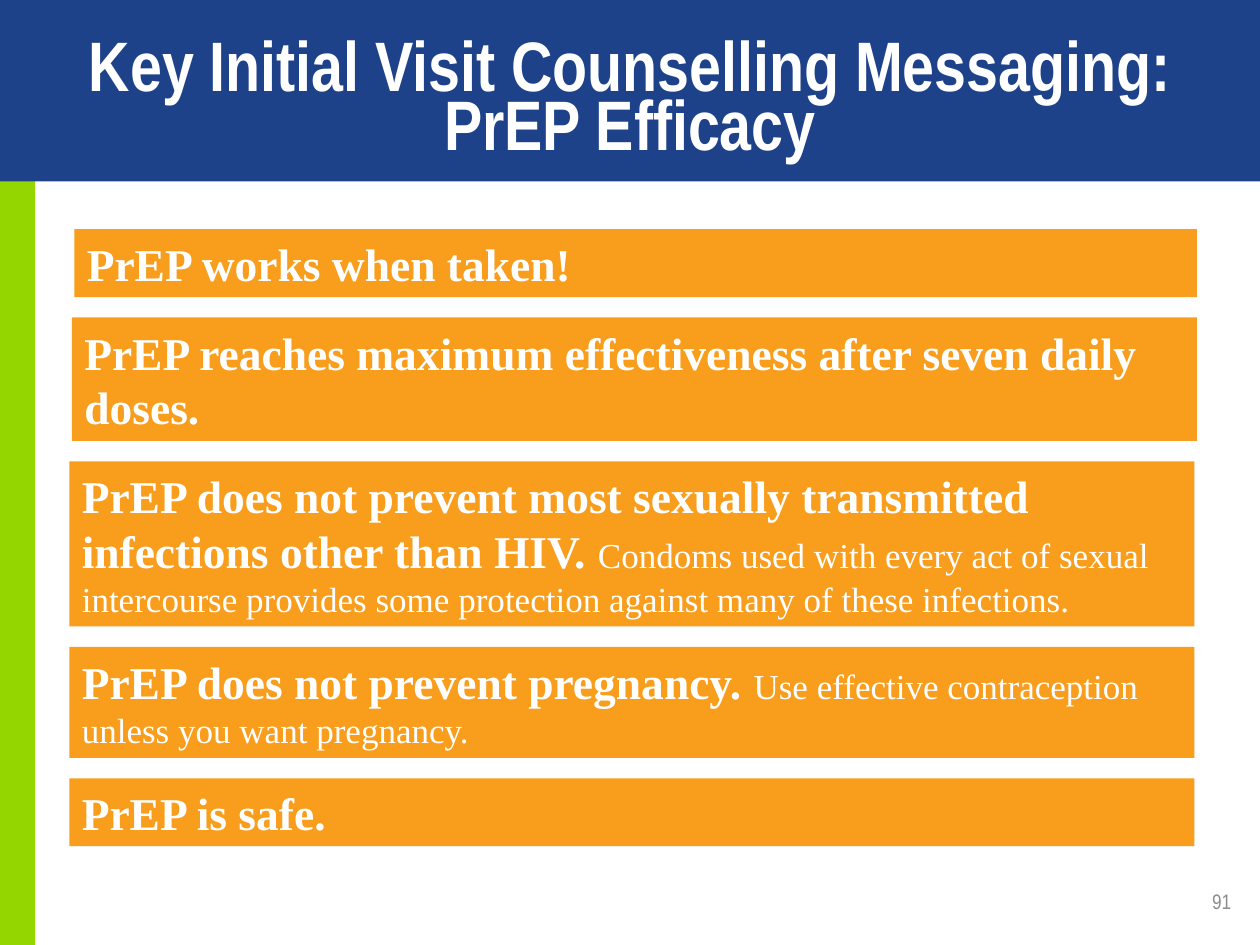
from dataclasses import dataclass

from pptx import Presentation
from pptx.dml.color import RGBColor as RGB
from pptx.enum.shapes import MSO_SHAPE as Shape
from pptx.enum.text import MSO_ANCHOR as Anchor, MSO_AUTO_SIZE as AutoSize, PP_ALIGN as Align
from pptx.util import Cm, Pt


@dataclass(frozen=True)
class Theme:
    """Colours, fonts and type sizes of the slide."""
    blue: RGB = RGB.from_string("1E428A")
    green: RGB = RGB.from_string("94D600")
    orange: RGB = RGB.from_string("F99D1C")
    white: RGB = RGB.from_string("FFFFFF")
    grey: RGB = RGB.from_string("8C8C8C")
    heading_font: str = "Arial Narrow"
    body_font: str = "Times New Roman"
    title: Pt = Pt(40)
    lead: Pt = Pt(26)
    detail: Pt = Pt(20)
    number: Pt = Pt(12)


THEME = Theme()
GAP = 0.41
MESSAGES = [
    (0.1, 22.63, 1.37, "PrEP works when taken!", ""),
    (0.05, 22.68, 2.49, "PrEP reaches maximum effectiveness after seven daily doses.", ""),
    (0, 22.68, 3.33,
     "PrEP does not prevent most sexually transmitted infections other than HIV. ",
     "Condoms used with every act of sexual intercourse provides some protection "
     "against many of these infections."),
    (0, 22.68, 2.24, "PrEP does not prevent pregnancy. ",
     "Use effective contraception unless you want pregnancy."),
    (0, 22.68, 1.37, "PrEP is safe.", ""),
]


def style(font, name, size, color, bold=False):
    """Set the typeface, size, colour and weight of a font."""
    font.name, font.size, font.bold = name, size, bold
    font.color.rgb = color


def add_block(s, left, top, width, height, color):
    """Add a flat rectangle, measured in centimetres."""
    sp = s.shapes.add_shape(Shape.RECTANGLE, Cm(left), Cm(top), Cm(width), Cm(height))
    sp.shadow.inherit = False
    sp.fill.solid()
    sp.fill.fore_color.rgb = color
    sp.line.fill.background()
    return sp


def add_header(s, left, top, width, height, text):
    """Draw the blue band and set the title placeholder on it."""
    band = add_block(s, left, top, width, height, THEME.blue)
    title = s.shapes.title
    title.left, title.top = Cm(left + 1.27), Cm(top + 0.89)
    title.width, title.height = Cm(width - 2.54), Cm(2.39)
    band.element.addnext(title.element)
    tf = title.text_frame
    tf.text = text
    tf.word_wrap, tf.auto_size = True, AutoSize.NONE
    tf.vertical_anchor = Anchor.MIDDLE
    p = tf.paragraphs[0]
    p.alignment, p.line_spacing = Align.CENTER, 0.7
    style(p.font, THEME.heading_font, THEME.title, THEME.white, True)


def add_message(s, left, top, width, height, lead, detail):
    """Add one orange bar with a bold lead and an optional detail."""
    tf = add_block(s, left, top, width, height, THEME.orange).text_frame
    tf.word_wrap, tf.vertical_anchor = True, Anchor.MIDDLE
    tf.auto_size = AutoSize.SHAPE_TO_FIT_TEXT
    p = tf.paragraphs[0]
    p.alignment = Align.LEFT
    for text, size, bold in ((lead, THEME.lead, True), (detail, THEME.detail, False)):
        if text:
            r = p.add_run()
            r.text = text
            style(r.font, THEME.body_font, size, THEME.white, bold)


def add_messages(s, left, top, messages):
    """Stack the message bars with equal gaps."""
    for indent, width, height, lead, detail in messages:
        add_message(s, left + indent, top, width, height, lead, detail)
        top += height + GAP


def add_page_number(s, left, top, width, height, number):
    """Add the right-aligned page number."""
    tf = s.shapes.add_textbox(Cm(left), Cm(top), Cm(width), Cm(height)).text_frame
    tf.word_wrap, tf.vertical_anchor = True, Anchor.MIDDLE
    tf.text = number
    p = tf.paragraphs[0]
    p.alignment = Align.RIGHT
    style(p.font, THEME.heading_font, THEME.number, THEME.grey)


def main():
    """Build and save the slide."""
    prs = Presentation()
    prs.slide_width, prs.slide_height = Cm(25.4), Cm(19.05)
    s = prs.slides.add_slide(prs.slide_layouts[5])
    add_block(s, 0, 3.33, 0.71, 15.72, THEME.green)
    add_header(s, 0, 0, 25.4, 3.66, "Key Initial Visit Counselling Messaging:\vPrEP Efficacy")
    add_messages(s, 1.4, 4.62, MESSAGES)
    add_page_number(s, 19.15, 17.65, 5.92, 1.02, "91")
    prs.save("out.pptx")


if __name__ == "__main__":
    main()
